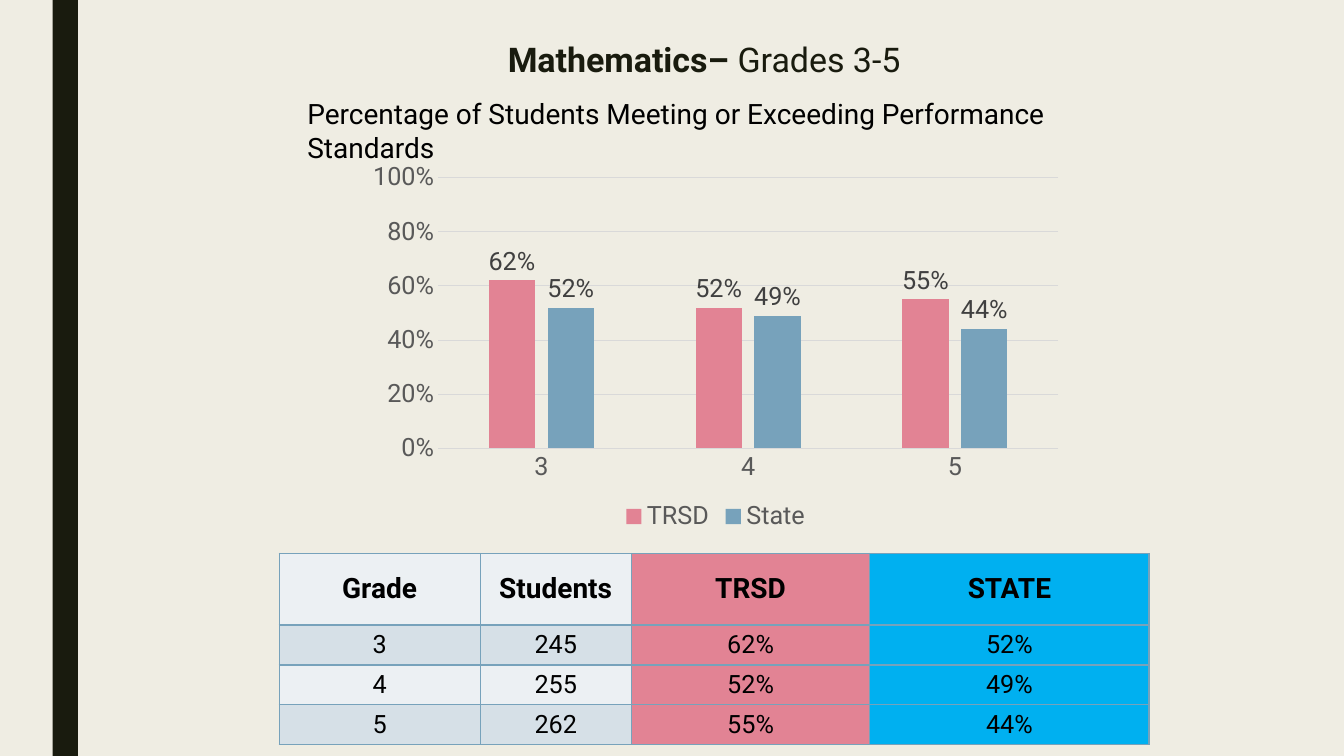
from dataclasses import dataclass

from lxml import etree
from pptx import Presentation
from pptx.chart.data import CategoryChartData
from pptx.dml.color import RGBColor
from pptx.enum import chart as ch, shapes, text
from pptx.oxml import ns
from pptx.util import Pt

FONT = "Roboto"
COLORS = {
    "background": "EFEDE3", "stripe": "191B0E", "black": "000000",
    "axis": "595959", "label": "404040", "grid": "D9D9D9",
    "trsd": "E28394", "state": "77A2BB", "state_column": "00B0F0",
    "light": "ECF0F3", "band": "D6E0E7",
}


@dataclass
class Series:
    name: str
    color: str
    column_fill: str
    values: tuple[float, ...]


GRADES = ("3", "4", "5")
STUDENTS = (245, 255, 262)
SERIES = (
    Series("TRSD", "trsd", "trsd", (0.62, 0.52, 0.55)),
    Series("State", "state", "state_column", (0.52, 0.49, 0.44)),
)
COLUMN_WIDTHS = (143.6, 108, 170.4, 199.4)
HEADER_HEIGHT, ROW_HEIGHT = 51.2, 28.5


def rgb(name: str) -> RGBColor:
    return RGBColor.from_string(COLORS[name])


def style_font(font, size: float, color: str, bold: bool = False) -> None:
    font.name, font.size, font.bold = FONT, Pt(size), bold
    font.color.rgb = rgb(color)


def fill_solid(fill, color: str) -> None:
    fill.solid()
    fill.fore_color.rgb = rgb(color)


def add_stripe(s) -> None:
    sp = s.shapes.add_shape(shapes.MSO_SHAPE.RECTANGLE, Pt(37.6), 0, Pt(18), Pt(540))
    sp.shadow.inherit = False
    fill_solid(sp.fill, "stripe")
    sp.line.fill.background()


def add_title(s) -> None:
    sp = s.shapes.title
    sp.left, sp.top, sp.width, sp.height = Pt(104), Pt(27.4), Pt(798), Pt(46)
    tf = sp.text_frame
    tf.word_wrap = True
    tf.auto_size = text.MSO_AUTO_SIZE.NONE
    tf.vertical_anchor = text.MSO_ANCHOR.TOP
    p = tf.paragraphs[0]
    p.alignment = text.PP_ALIGN.CENTER
    p.line_spacing = 0.89
    for content, bold in (("Mathematics– ", True), ("Grades 3-5", False)):
        r = p.add_run()
        r.text = content
        style_font(r.font, 24.3, "stripe", bold)


def add_subtitle(s) -> None:
    tf = s.shapes.add_textbox(Pt(212.4), Pt(65.5), Pt(608.4), Pt(31.7)).text_frame
    tf.word_wrap = True
    p = tf.paragraphs[0]
    p.text = "Percentage of Students Meeting or Exceeding Performance Standards"
    style_font(p.font, 20, "black")


def add_chart(s) -> None:
    data = CategoryChartData(number_format="0%")
    data.categories = GRADES
    for series in SERIES:
        data.add_series(series.name, series.values)
    chart = s.shapes.add_chart(
        ch.XL_CHART_TYPE.COLUMN_CLUSTERED,
        Pt(256.3), Pt(110.9), Pt(509.8), Pt(272.2), data,
    ).chart
    style_font(chart.font, 18, "black")
    chart.has_title = False
    chart.has_legend = True
    chart.legend.position = ch.XL_LEGEND_POSITION.BOTTOM
    chart.legend.include_in_layout = False
    style_font(chart.legend.font, 18, "axis")

    for axis in (chart.category_axis, chart.value_axis):
        axis.major_tick_mark = axis.minor_tick_mark = ch.XL_TICK_MARK.NONE
        style_font(axis.tick_labels.font, 18, "axis")
    values = chart.value_axis
    values.minimum_scale, values.maximum_scale, values.major_unit = 0, 1, 0.2
    values.tick_labels.number_format = "0%"
    values.tick_labels.number_format_is_linked = False
    values.format.line.fill.background()
    for line in (chart.category_axis.format.line, values.major_gridlines.format.line):
        line.color.rgb = rgb("grid")
        line.width = Pt(0.75)

    plot = chart.plots[0]
    plot.gap_width, plot.overlap, plot.vary_by_categories = 219, -27, False
    for series, bars in zip(SERIES, plot.series):
        fill_solid(bars.format.fill, series.color)
        labels = bars.data_labels
        labels.show_value = True
        labels.position = ch.XL_LABEL_POSITION.OUTSIDE_END
        style_font(labels.font, 18, "label")


def add_borders(cell) -> None:
    tc_pr = cell._tc.get_or_add_tcPr()
    for side in ("a:lnL", "a:lnR", "a:lnT", "a:lnB"):
        line = etree.SubElement(tc_pr, ns.qn(side), w=str(Pt(1)))
        fill = etree.SubElement(line, ns.qn("a:solidFill"))
        etree.SubElement(fill, ns.qn("a:srgbClr"), val=COLORS["state"])


def add_table(s) -> None:
    rows = [["Grade", "Students", *(series.name.upper() for series in SERIES)]]
    for i, (grade, count) in enumerate(zip(GRADES, STUDENTS)):
        rows.append([grade, str(count), *(f"{series.values[i]:.0%}" for series in SERIES)])
    table = s.shapes.add_table(
        len(rows), len(COLUMN_WIDTHS), Pt(199.4), Pt(395.3),
        Pt(sum(COLUMN_WIDTHS)), Pt(HEADER_HEIGHT + ROW_HEIGHT * len(GRADES)),
    ).table
    for column, width in zip(table.columns, COLUMN_WIDTHS):
        column.width = Pt(width)
    for i, row in enumerate(rows):
        header = i == 0
        table.rows[i].height = Pt(HEADER_HEIGHT if header else ROW_HEIGHT)
        band = "band" if i % 2 else "light"
        fills = (band, band, *(series.column_fill for series in SERIES))
        for j, (content, color) in enumerate(zip(row, fills)):
            cell = table.cell(i, j)
            add_borders(cell)
            fill_solid(cell.fill, color)
            cell.vertical_anchor = text.MSO_ANCHOR.MIDDLE if header else text.MSO_ANCHOR.TOP
            p = cell.text_frame.paragraphs[0]
            p.text = content
            p.alignment = text.PP_ALIGN.CENTER
            style_font(p.font, 20 if header else 18, "black", header)


def main() -> None:
    prs = Presentation()
    prs.slide_width, prs.slide_height = Pt(960), Pt(540)
    s = prs.slides.add_slide(prs.slide_layouts[5])
    fill_solid(s.background.fill, "background")
    add_stripe(s)
    add_title(s)
    add_table(s)
    add_subtitle(s)
    add_chart(s)
    prs.save("out.pptx")


if __name__ == "__main__":
    main()
